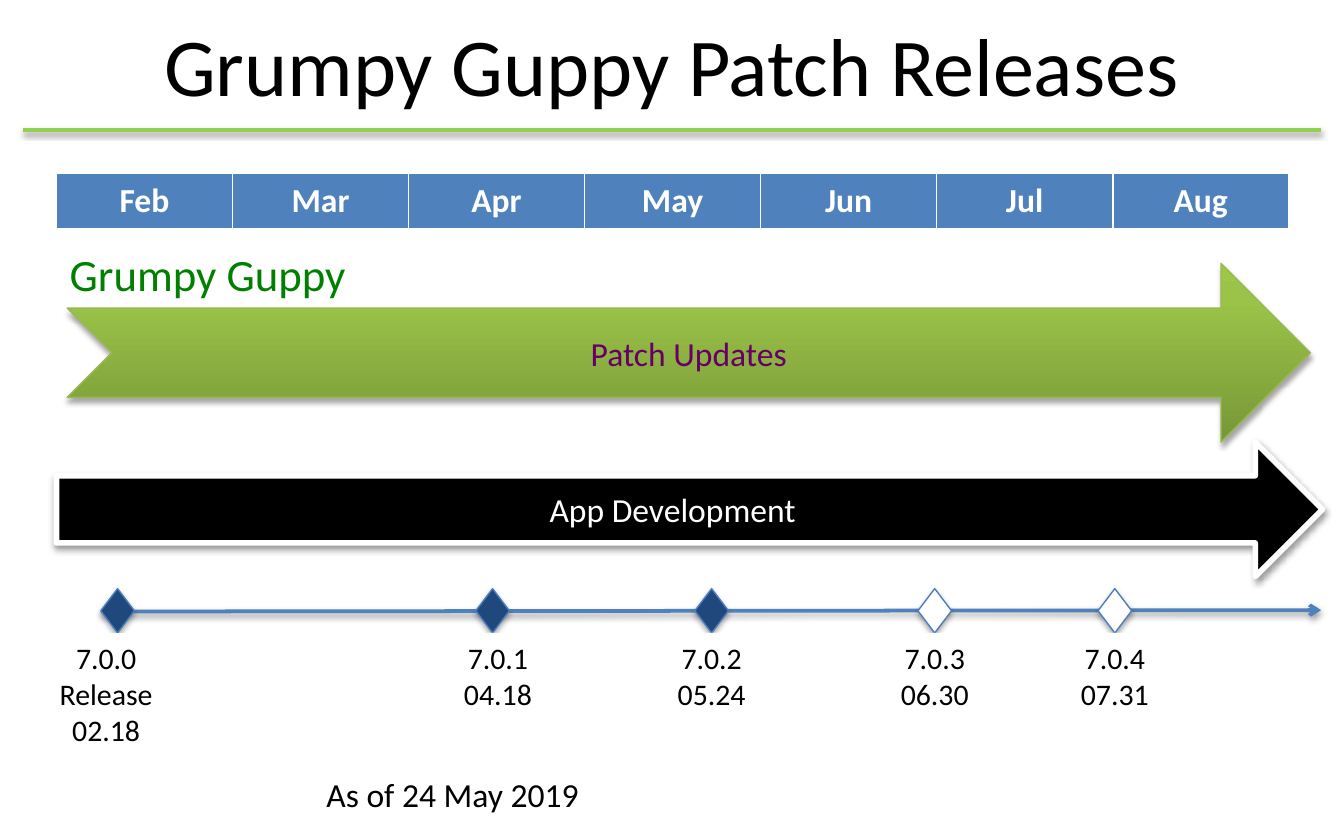
from pptx import Presentation
from pptx.dml.color import RGBColor
from pptx.enum.shapes import MSO_CONNECTOR, MSO_SHAPE
from pptx.enum.text import MSO_ANCHOR, PP_ALIGN
from pptx.oxml import parse_xml
from pptx.oxml.ns import nsdecls, qn
from pptx.util import Inches, Pt

FONT = "Calibri"
BLACK = RGBColor(0x00, 0x00, 0x00)
WHITE = RGBColor(0xFF, 0xFF, 0xFF)
LIME = RGBColor(0x92, 0xD0, 0x50)
GREEN = RGBColor(0x00, 0x80, 0x00)
LEAF_EDGE = RGBColor(0x98, 0xB9, 0x55)
PURPLE = RGBColor(0x66, 0x00, 0x66)
BLUE = RGBColor(0x4F, 0x81, 0xBD)
BLUE_EDGE = RGBColor(0x4B, 0x7E, 0xBC)
NAVY = RGBColor(0x1F, 0x49, 0x7D)
LEAF_STOPS = [(0, RGBColor(0x77, 0x97, 0x37)),
              (80, RGBColor(0x9B, 0xC3, 0x48)),
              (100, RGBColor(0x9D, 0xC7, 0x46))]

MONTHS = ["Feb", "Mar", "Apr", "May", "Jun", "Jul", "Aug"]
# diamond left, label left, label width, label lines, diamond fill
RELEASES = [
    (0.75, 0.25, 1.08, ["7.0.0 Release 02.18"], NAVY),
    (3.54, 3.33, 0.75, ["7.0.1", "04.18"], NAVY),
    (5.17, 4.92, 0.75, ["7.0.2", "05.24"], NAVY),
    (6.83, 6.58, 0.75, ["7.0.3", "06.30"], WHITE),
    (8.17, 7.92, 0.75, ["7.0.4", "07.31"], WHITE),
]


def add_shadow(shape, opacity=38, distance=1.6):
    """Drop a soft black shadow straight down."""
    properties = shape._element.spPr
    for effects in properties.findall(qn("a:effectLst")):
        properties.remove(effects)
    properties.append(parse_xml(
        f'<a:effectLst {nsdecls("a")}><a:outerShdw blurRad="{Pt(3.1)}" '
        f'dist="{Pt(distance)}" dir="5400000" rotWithShape="0">'
        f'<a:srgbClr val="000000"><a:alpha val="{opacity * 1000}"/></a:srgbClr>'
        '</a:outerShdw></a:effectLst>'))


def fill_gradient(shape, stops):
    """Fill from the bottom up with (percent, colour) stops."""
    shape.fill.gradient()
    old = shape._element.spPr.find(qn("a:gradFill"))
    marks = "".join(f'<a:gs pos="{percent * 1000}"><a:srgbClr val="{color}"/></a:gs>'
                    for percent, color in stops)
    new = parse_xml(f'<a:gradFill {nsdecls("a")} rotWithShape="1"><a:gsLst>{marks}'
                    '</a:gsLst><a:lin ang="16200000" scaled="0"/></a:gradFill>')
    old.getparent().replace(old, new)


def write(frame, lines, size, color, align=PP_ALIGN.CENTER, bold=False):
    frame.word_wrap = True
    for number, line in enumerate(lines):
        para = frame.add_paragraph() if number else frame.paragraphs[0]
        para.alignment = align
        span = para.add_run()
        span.text = line
        span.font.name = FONT
        span.font.size = Pt(size)
        span.font.bold = bold
        span.font.color.rgb = color


def add_text(parent, box, lines, size, color, align=PP_ALIGN.LEFT):
    label = parent.add_textbox(*map(Inches, box))
    write(label.text_frame, lines, size, color, align)
    return label


def add_shape(parent, kind, box, edge, weight):
    shape = parent.add_shape(kind, *map(Inches, box))
    shape.line.color.rgb = edge
    shape.line.width = Pt(weight)
    return shape


def add_line(page, start, end, color):
    line = page.shapes.add_connector(
        MSO_CONNECTOR.STRAIGHT, *map(Inches, (*start, *end)))
    line.line.color.rgb = color
    line.line.width = Pt(2)
    add_shadow(line)
    return line


def add_heading(page, box):
    left, top, width, height = box
    add_line(page, (0.17, 0.97), (9.83, 0.97), LIME)
    title = page.shapes.title
    title.left, title.top = Inches(left), Inches(top)
    title.width, title.height = Inches(width), Inches(height)
    title.text_frame.vertical_anchor = MSO_ANCHOR.MIDDLE
    write(title.text_frame, ["Grumpy Guppy Patch Releases"], 44, BLACK)


def add_months(page, box):
    table = page.shapes.add_table(1, len(MONTHS), *map(Inches, box)).table
    table.horz_banding = False
    for cell, month in zip(table.iter_cells(), MONTHS):
        cell.fill.solid()
        cell.fill.fore_color.rgb = BLUE
        write(cell.text_frame, [month], 18, WHITE, bold=True)


def add_patch_arrow(page, box):
    arrow = add_shape(page.shapes, MSO_SHAPE.NOTCHED_RIGHT_ARROW, box, LEAF_EDGE, 0.75)
    fill_gradient(arrow, LEAF_STOPS)
    add_shadow(arrow, 35, 1.8)
    write(arrow.text_frame, ["Patch Updates"], 18, PURPLE)


def add_app_arrow(page, box):
    arrow = add_shape(page.shapes, MSO_SHAPE.RIGHT_ARROW, box, WHITE, 3)
    arrow.fill.solid()
    arrow.fill.fore_color.rgb = BLACK
    add_shadow(arrow)
    write(arrow.text_frame, ["App Development"], 18, WHITE)


def add_release(page, top, release):
    """Group a diamond on the timeline with the label under it."""
    diamond_left, label_left, label_width, lines, color = release
    group = page.shapes.add_group_shape().shapes
    diamond = add_shape(group, MSO_SHAPE.DIAMOND,
                        (diamond_left, top, 0.25, 0.33), BLUE_EDGE, 0.75)
    diamond.fill.solid()
    diamond.fill.fore_color.rgb = color
    add_shadow(diamond, 35, 1.8)
    height = 0.91 if len(lines) == 1 else 0.64
    label = add_text(group, (label_left, top + 0.33, label_width, height),
                     lines, 16, BLACK, PP_ALIGN.CENTER)
    label.fill.solid()
    label.fill.fore_color.rgb = WHITE


def add_timeline(page):
    axis = add_line(page, (0.75, 4.55), (9.83, 4.54), BLUE)
    axis.line._get_or_add_ln().append(
        parse_xml(f'<a:tailEnd {nsdecls("a")} type="arrow"/>'))
    for release in RELEASES:
        add_release(page, 4.38, release)


def main():
    deck = Presentation()
    deck.slide_width, deck.slide_height = Inches(10), Inches(6.25)
    page = deck.slides.add_slide(deck.slide_layouts[5])
    add_heading(page, (0.5, 0.12, 9, 0.71))
    add_months(page, (0.42, 1.29, 9.17, 0.41))
    add_text(page.shapes, (0.42, 1.79, 3.75, 0.5), ["Grumpy Guppy"], 24, GREEN)
    add_patch_arrow(page, (0.5, 1.96, 9.25, 1.33))
    add_app_arrow(page, (0.42, 3.29, 9.42, 1))
    add_timeline(page)
    add_text(page.shapes, (2.33, 5.71, 2.58, 0.4), ["As of 24 May 2019"], 18, BLACK)
    deck.save("out.pptx")


if __name__ == "__main__":
    main()
